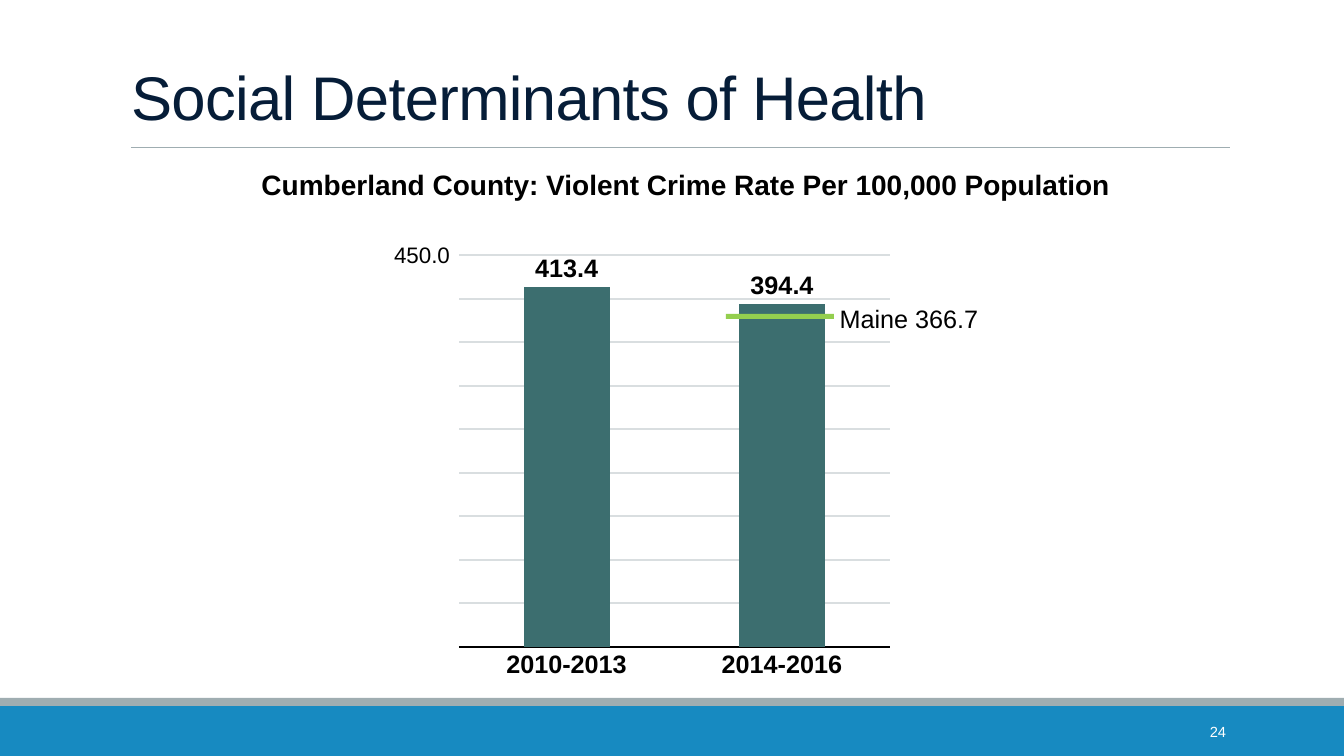
"""Builds the slide on the violent crime rate in Cumberland County."""
import lxml.etree
import pptx
import pptx.chart.data
import pptx.dml.color
import pptx.enum.chart
import pptx.enum.shapes
import pptx.enum.text
import pptx.oxml
import pptx.oxml.ns
import pptx.util

RGBColor = pptx.dml.color.RGBColor
BLACK = RGBColor(0x00, 0x00, 0x00)
WHITE = RGBColor(0xFF, 0xFF, 0xFF)
NAVY = RGBColor(0x06, 0x1D, 0x38)
BLUE = RGBColor(0x17, 0x8A, 0xC1)
GREY = RGBColor(0x9F, 0xAD, 0xB1)
GRID = RGBColor(0xD9, 0xDE, 0xE0)
TEAL = RGBColor(0x3C, 0x6E, 0x6F)
GREEN = RGBColor(0x94, 0xCF, 0x4F)

Align = pptx.enum.text.PP_ALIGN
Anchor = pptx.enum.text.MSO_ANCHOR
WIDTH, HEIGHT = 1344, 756


def px(length):
    return pptx.util.Emu(round(length * 914400 / 100.8))


class SlideBuilder:
    def __init__(self, presentation, face):
        self.slide = presentation.slides.add_slide(presentation.slide_layouts[5])
        self.shapes = self.slide.shapes
        self.face = face

    def style(self, font, size, color=BLACK, bold=False):
        font.name = self.face
        font.size = pptx.util.Pt(size)
        font.color.rgb = color
        font.bold = bold

    def fill_frame(self, frame, words, size, color, align, anchor, bold=False, spacing=1.0):
        frame.word_wrap = True
        frame.auto_size = pptx.enum.text.MSO_AUTO_SIZE.NONE
        frame.vertical_anchor = anchor
        frame.text = words
        paragraph = frame.paragraphs[0]
        paragraph.alignment = align
        paragraph.line_spacing = spacing
        self.style(paragraph.font, size, color, bold)

    def title(self, words, left, top, width, height):
        heading = self.shapes.title
        heading.left, heading.top = px(left), px(top)
        heading.width, heading.height = px(width), px(height)
        self.fill_frame(heading.text_frame, words, 44, NAVY, Align.LEFT, Anchor.BOTTOM,
                        spacing=0.85)
        run = heading.text_frame.paragraphs[0].runs[0]
        run._r.get_or_add_rPr().set("spc", "-50")

    def text(self, words, left, top, width, height, size, color=BLACK,
             align=Align.CENTER, anchor=Anchor.TOP, bold=False, spacing=1.0):
        box = self.shapes.add_textbox(px(left), px(top), px(width), px(height))
        self.fill_frame(box.text_frame, words, size, color, align, anchor, bold, spacing)

    def bar(self, left, top, width, height, color):
        band = self.shapes.add_shape(pptx.enum.shapes.MSO_SHAPE.RECTANGLE,
                                     px(left), px(top), px(width), px(height))
        band.shadow.inherit = False
        band.fill.solid()
        band.fill.fore_color.rgb = color
        band.line.fill.background()

    def rule(self, left, right, y, color, weight):
        line = self.shapes.add_connector(pptx.enum.shapes.MSO_CONNECTOR.STRAIGHT,
                                         px(left), px(y), px(right), px(y))
        line.line.color.rgb = color
        line.line.width = pptx.util.Pt(weight)
        properties = line._element.spPr
        lxml.etree.SubElement(properties, pptx.oxml.ns.qn("a:effectLst"))

    def column_chart(self, rates, left, top, width, height, plot):
        data = pptx.chart.data.CategoryChartData(number_format="0.0")
        data.categories = list(rates)
        data.add_series("Series 1", list(rates.values()))
        chart = self.shapes.add_chart(pptx.enum.chart.XL_CHART_TYPE.COLUMN_CLUSTERED,
                                      px(left), px(top), px(width), px(height), data).chart
        chart.has_title = False
        chart.has_legend = False
        self.style(chart.font, 10)

        columns = chart.plots[0]
        columns.vary_by_categories = False
        columns.gap_width = 150
        fill = columns.series[0].format.fill
        fill.solid()
        fill.fore_color.rgb = TEAL
        columns.has_data_labels = True
        labels = columns.data_labels
        labels.show_value = True
        labels.position = pptx.enum.chart.XL_LABEL_POSITION.OUTSIDE_END
        labels.number_format = "0.0"
        labels.number_format_is_linked = False
        self.style(labels.font, 18, bold=True)

        periods = chart.category_axis
        periods.major_tick_mark = pptx.enum.chart.XL_TICK_MARK.NONE
        periods.format.line.color.rgb = BLACK
        periods.format.line.width = pptx.util.Pt(1.5)
        self.style(periods.tick_labels.font, 18, bold=True)

        scale = chart.value_axis
        scale.minimum_scale, scale.maximum_scale, scale.major_unit = 0, 450, 50
        scale.has_major_gridlines = True
        scale.major_gridlines.format.line.color.rgb = GRID
        scale.major_gridlines.format.line.width = pptx.util.Pt(1.5)
        scale.visible = False
        self.place_plot(chart, plot)

    def place_plot(self, chart, plot):
        area = chart._chartSpace.chart.plotArea
        for old in area.findall(pptx.oxml.ns.qn("c:layout")):
            area.remove(old)
        modes = '<c:xMode val="edge"/><c:yMode val="edge"/>'
        sizes = "".join(f'<c:{key} val="{share}"/>' for key, share in zip("xywh", plot))
        area.insert(0, pptx.oxml.parse_xml(
            f'<c:layout {pptx.oxml.ns.nsdecls("c")}><c:manualLayout>'
            f'<c:layoutTarget val="inner"/>{modes}{sizes}</c:manualLayout></c:layout>'))


def main():
    presentation = pptx.Presentation()
    presentation.slide_width, presentation.slide_height = px(WIDTH), px(HEIGHT)
    page = SlideBuilder(presentation, "Arial")

    page.bar(0, 706, WIDTH, 50, BLUE)
    page.bar(0, 698, WIDTH, 8, GREY)
    page.rule(131, 1230, 147, GREY, 0.5)
    page.title("Social Determinants of Health", 121, 31, 1109, 107)
    page.text("Cumberland County: Violent Crime Rate Per 100,000 Population",
              138, 166, 1096, 45, 20, bold=True, spacing=0.9)
    page.column_chart({"2010-2013": 413.4, "2014-2016": 394.4},
                      392, 211, 544, 481, (0.123, 0.092, 0.792, 0.814))
    page.text("Maine 366.7", 824, 298, 170, 30, 18)
    page.text("450.0", 380, 236, 84, 30, 16)
    page.text("24", 1092, 712, 144, 40, 10.5, WHITE, Align.RIGHT, Anchor.MIDDLE)
    page.bar(726, 314, 108, 5, GREEN)

    presentation.save("out.pptx")


if __name__ == "__main__":
    main()
